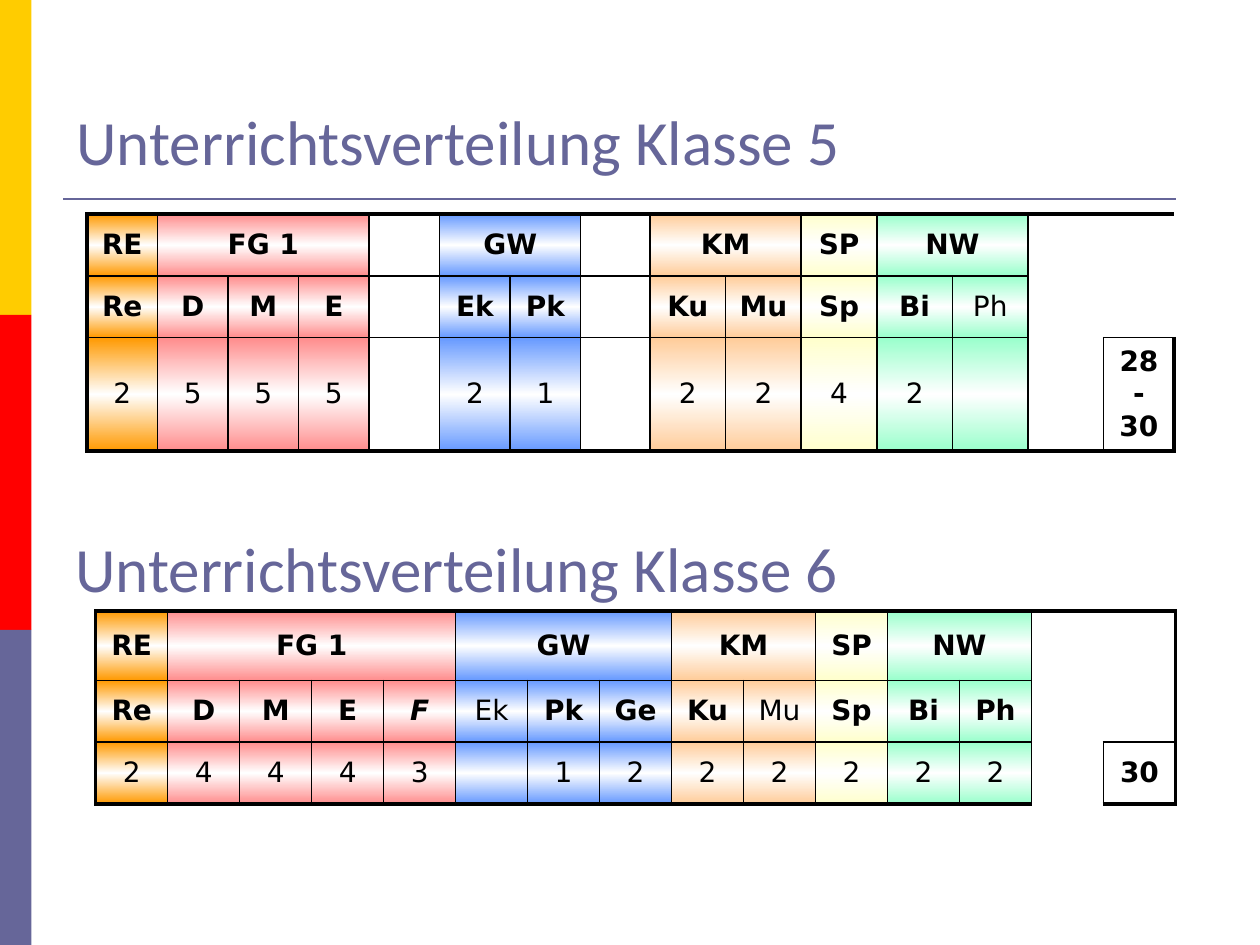
from dataclasses import dataclass

from lxml import etree
from pptx import Presentation
from pptx.dml.color import RGBColor
from pptx.enum.shapes import MSO_CONNECTOR, MSO_SHAPE
from pptx.enum.text import MSO_ANCHOR, PP_ALIGN
from pptx.oxml.ns import qn
from pptx.util import Inches, Pt

STRAIGHT = MSO_CONNECTOR.STRAIGHT
RECTANGLE = MSO_SHAPE.RECTANGLE
MIDDLE, BOTTOM = MSO_ANCHOR.MIDDLE, MSO_ANCHOR.BOTTOM
CENTER = PP_ALIGN.CENTER

COLORS = {
    "yellow": "FFCC00", "red": "FF0000", "violet": "666699",
    "black": "000000", "white": "FFFFFF",
    "RE": "FF9900", "FG 1": "FF8D8D", "GW": "6699FF",
    "KM": "FFCC99", "SP": "FFFFCC", "NW": "99FFCC",
}
TITLE_FONT, TABLE_FONT = "Calibri", "DejaVu Sans"
NO_STYLE_NO_GRID = "{2D5ABB26-0587-4C30-8999-92F81FD0307C}"
OUTER_BORDER, INNER_BORDER = 2.25, 1


@dataclass
class Subject:
    name: str = ""
    hours: str = ""
    bold: bool = True
    italic: bool = False


@dataclass
class Area:
    name: str
    subjects: list[Subject]


@dataclass
class Region:
    row: int
    col: int
    rows: int = 1
    cols: int = 1
    text: str = ""
    area: str = ""
    bold: bool = True
    italic: bool = False
    sides: str = "LRTB"


@dataclass
class Plan:
    left: float
    top: float
    widths: list[float]
    heights: list[float]
    areas: list[Area]
    margin_regions: list[Region]


GAP = Area("", [Subject()])
CLASS_5 = Plan(
    0.69, 1.7, [0.56] * 7 + [0.55] + [0.6] * 6 + [0.56], [0.49, 0.49, 0.87],
    [
        Area("RE", [Subject("Re", "2")]),
        Area("FG 1", [Subject("D", "5"), Subject("M", "5"), Subject("E", "5")]),
        GAP,
        Area("GW", [Subject("Ek", "2"), Subject("Pk", "1")]),
        GAP,
        Area("KM", [Subject("Ku", "2"), Subject("Mu", "2")]),
        Area("SP", [Subject("Sp", "4")]),
        Area("NW", [Subject("Bi", "2"), Subject("Ph", bold=False)]),
    ],
    [
        Region(0, 13, cols=2, sides="LRT"),
        Region(1, 13, cols=2, sides="LR"),
        Region(2, 13, sides="LRB"),
        Region(2, 14, text="28 - 30"),
    ],
)
CLASS_6 = Plan(
    0.76, 4.85, [8.57 / 15] * 15, [0.55, 0.49, 0.49],
    [
        Area("RE", [Subject("Re", "2")]),
        Area("FG 1", [Subject("D", "4"), Subject("M", "4"), Subject("E", "4"),
                      Subject("F", "3", italic=True)]),
        Area("GW", [Subject("Ek", bold=False), Subject("Pk", "1"), Subject("Ge", "2")]),
        Area("KM", [Subject("Ku", "2"), Subject("Mu", "2", bold=False)]),
        Area("SP", [Subject("Sp", "2")]),
        Area("NW", [Subject("Bi", "2"), Subject("Ph", "2")]),
    ],
    [
        Region(0, 13, rows=3, sides="LTB"),
        Region(0, 14, rows=2, sides="RTB"),
        Region(2, 14, text="30"),
    ],
)


def rgb(name: str) -> RGBColor:
    return RGBColor.from_string(COLORS[name])


def add_child(parent, tag: str, **attributes: str):
    return etree.SubElement(parent, qn(tag), attributes)


def add_solid_fill(parent, color: str) -> None:
    add_child(add_child(parent, "a:solidFill"), "a:srgbClr", val=COLORS[color])


def add_gradient(properties, color: str) -> None:
    gradient = add_child(properties, "a:gradFill", rotWithShape="1")
    stops = add_child(gradient, "a:gsLst")
    for position, name in ((0, color), (50, "white"), (100, color)):
        stop = add_child(stops, "a:gs", pos=str(position * 1000))
        add_child(stop, "a:srgbClr", val=COLORS[name])
    add_child(gradient, "a:lin", ang="5400000", scaled="1")


def add_band(slide, index: int, color: str) -> None:
    band = slide.shapes.add_shape(
        RECTANGLE, 0, Inches(2.5 * index), Inches(0.25), Inches(2.5))
    band.shadow.inherit = False
    band.fill.solid()
    band.fill.fore_color.rgb = rgb(color)
    band.line.fill.background()


def add_rule(slide) -> None:
    rule = slide.shapes.add_connector(
        STRAIGHT, Inches(0.5), Inches(1.58), Inches(9.33), Inches(1.58))
    rule.line.color.rgb = rgb("violet")
    rule.line.width = Pt(1.5)
    add_child(rule.element.spPr, "a:effectLst")


def add_heading(slide, text: str, left: float, top: float, height: float, anchor) -> None:
    frame = slide.shapes.add_textbox(
        Inches(left), Inches(top), Inches(9), Inches(height)).text_frame
    frame.word_wrap = True
    frame.vertical_anchor = anchor
    run = frame.paragraphs[0].add_run()
    run.text = text
    run.font.size = Pt(36)
    run.font.name = TITLE_FONT
    run.font.color.rgb = rgb("violet")


def write_cell(cell, region: Region) -> None:
    cell.vertical_anchor = MIDDLE
    paragraph = cell.text_frame.paragraphs[0]
    paragraph.alignment = CENTER
    spacing = add_child(paragraph._p.get_or_add_pPr(), "a:spcBef")
    add_child(spacing, "a:spcPct", val="20000")
    run = paragraph.add_run()
    run.text = region.text
    run.font.size = Pt(16)
    run.font.name = TABLE_FONT
    run.font.bold = region.bold
    run.font.italic = region.italic
    run.font.color.rgb = rgb("black")


def format_cell(cell, row: int, col: int, region: Region, plan: Plan) -> None:
    properties = cell._tc.get_or_add_tcPr()
    last_row, last_col = len(plan.heights) - 1, len(plan.widths) - 1
    edges = {
        "L": (col == region.col, col == 0),
        "R": (col == region.col + region.cols - 1, col == last_col),
        "T": (row == region.row, row == 0),
        "B": (row == region.row + region.rows - 1, row == last_row),
    }
    for side, (on_region_edge, on_table_edge) in edges.items():
        if side in region.sides and on_region_edge:
            width = OUTER_BORDER if on_table_edge else INNER_BORDER
            border = add_child(properties, f"a:ln{side}", w=str(Pt(width)))
            add_solid_fill(border, "black")
    if region.area:
        add_gradient(properties, region.area)
    else:
        cell.fill.background()


def area_regions(areas: list[Area]) -> list[Region]:
    regions, col = [], 0
    for area in areas:
        regions.append(Region(0, col, cols=len(area.subjects), text=area.name, area=area.name))
        for subject in area.subjects:
            regions.append(Region(1, col, text=subject.name, area=area.name,
                                  bold=subject.bold, italic=subject.italic))
            regions.append(Region(2, col, text=subject.hours, area=area.name, bold=False))
            col += 1
    return regions


def add_plan(slide, plan: Plan) -> None:
    frame = slide.shapes.add_table(
        len(plan.heights), len(plan.widths), Inches(plan.left), Inches(plan.top),
        Inches(sum(plan.widths)), Inches(sum(plan.heights)))
    table = frame.table
    table.first_row = table.horz_banding = False
    next(frame.element.iter(qn("a:tableStyleId"))).text = NO_STYLE_NO_GRID
    for column, width in zip(table.columns, plan.widths):
        column.width = Inches(width)
    for row, height in zip(table.rows, plan.heights):
        row.height = Inches(height)
    for region in area_regions(plan.areas) + plan.margin_regions:
        end_row, end_col = region.row + region.rows, region.col + region.cols
        origin = table.cell(region.row, region.col)
        if region.rows * region.cols > 1:
            origin.merge(table.cell(end_row - 1, end_col - 1))
        if region.text:
            write_cell(origin, region)
        for row in range(region.row, end_row):
            for col in range(region.col, end_col):
                format_cell(table.cell(row, col), row, col, region, plan)


def main() -> None:
    deck = Presentation()
    deck.slide_width, deck.slide_height = Inches(10), Inches(7.5)
    slide = deck.slides.add_slide(deck.slide_layouts[6])
    for index, color in enumerate(("yellow", "red", "violet")):
        add_band(slide, index, color)
    add_rule(slide)
    add_heading(slide, "Unterrichtsverteilung Klasse 5", 0.51, 0.44, 1.02, BOTTOM)
    add_plan(slide, CLASS_5)
    add_heading(slide, "Unterrichtsverteilung Klasse 6", 0.5, 3.88, 1.25, MIDDLE)
    add_plan(slide, CLASS_6)
    deck.save("out.pptx")


if __name__ == "__main__":
    main()
